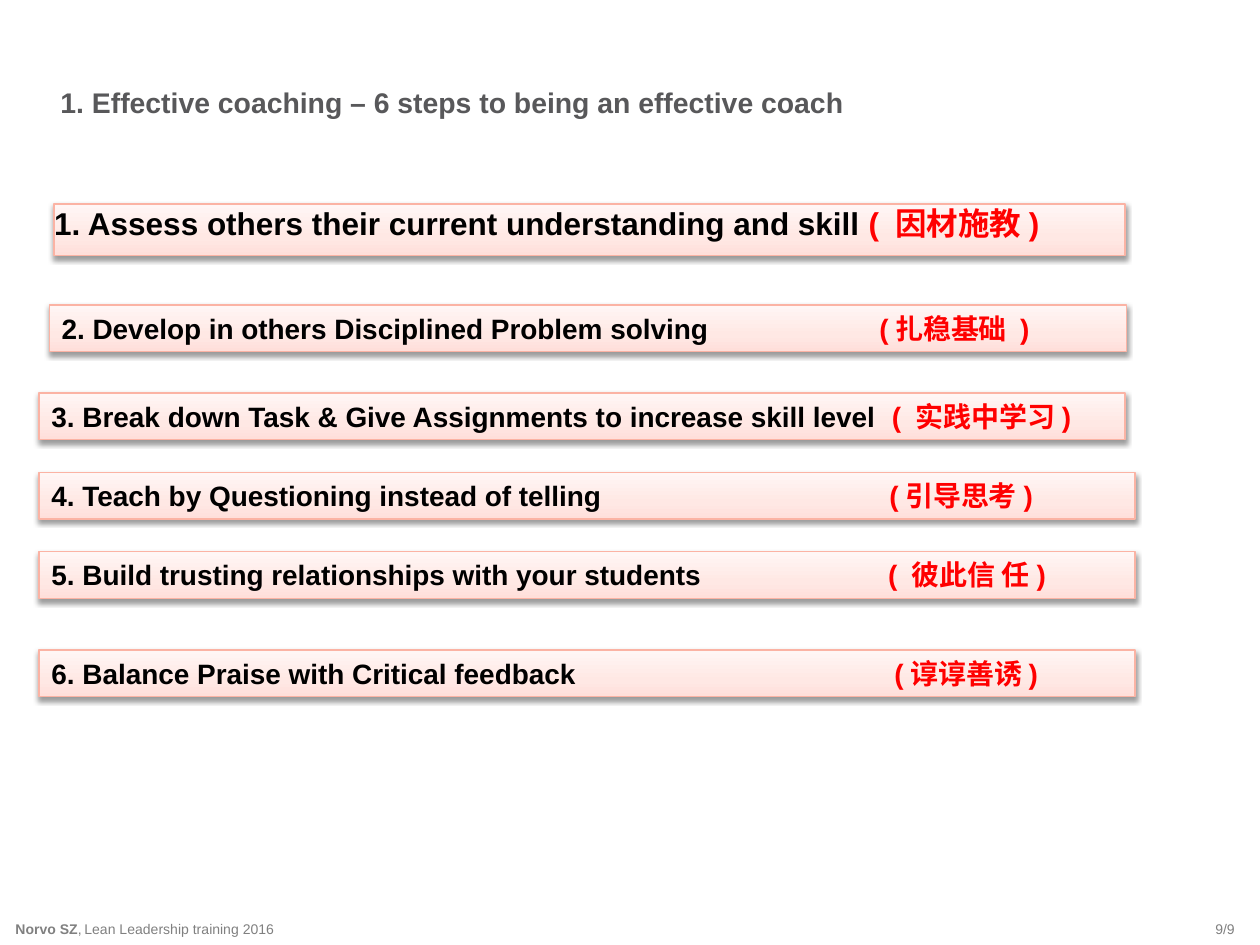
"""Build the slide on six steps to being an effective coach."""
from lxml import etree
from pptx import Presentation
from pptx.dml.color import RGBColor
from pptx.enum.shapes import MSO_SHAPE
from pptx.enum.text import MSO_ANCHOR, PP_ALIGN
from pptx.oxml import parse_xml
from pptx.util import Inches, Pt

RECTANGLE = MSO_SHAPE.RECTANGLE
TOP, MIDDLE = MSO_ANCHOR.TOP, MSO_ANCHOR.MIDDLE
LEFT, RIGHT = PP_ALIGN.LEFT, PP_ALIGN.RIGHT
NAMESPACE = "http://schemas.openxmlformats.org/drawingml/2006/main"
GRADIENT = f"""<a:gradFill xmlns:a="{NAMESPACE}" rotWithShape="1"><a:gsLst>
<a:gs pos="0"><a:srgbClr val="FFDFDA"/></a:gs>
<a:gs pos="35000"><a:srgbClr val="FFE8E4"/></a:gs>
<a:gs pos="100000"><a:srgbClr val="FFF6F5"/></a:gs>
</a:gsLst><a:lin ang="16200000" scaled="1"/></a:gradFill>"""
SHADOW = f"""<a:outerShdw xmlns:a="{NAMESPACE}" blurRad="40000" dist="20000"
dir="5400000" rotWithShape="0"><a:srgbClr val="000000"><a:alpha val="38000"/>
</a:srgbClr></a:outerShdw>"""


def color(value):
    return RGBColor.from_string(value)


def write_text(shape, runs, size, margins, anchor, align=LEFT):
    frame = shape.text_frame
    left, top, right, bottom = [Inches(margin) for margin in margins]
    layout = {"word_wrap": True, "vertical_anchor": anchor, "margin_left": left,
              "margin_top": top, "margin_right": right, "margin_bottom": bottom}
    for name, value in layout.items():
        setattr(frame, name, value)
    para = frame.paragraphs[0]
    para.alignment = align
    for text, ink, bold in runs:
        span = para.add_run()
        span.text = text
        for name, value in {"name": "Arial", "size": Pt(size), "bold": bold}.items():
            setattr(span.font, name, value)
        span.font.color.rgb = color(ink)
    return para


deck = Presentation()
deck.slide_width, deck.slide_height = Inches(10), Inches(7.5)
page = deck.slides.add_slide(deck.slide_layouts[6])

GRAY = "808080"
labels = [
    (9.25, 7.25, 0.75, 0.25, [("9/9", GRAY, False)], 8, (0, 0, 0.2, 0), RIGHT),
    (0, 7.25, 0.67, 0.25, [("Norvo SZ", GRAY, True), (",", GRAY, False)], 8,
     (0.04, 0, 0.02, 0), RIGHT),
    (0.67, 7.25, 8.17, 0.25, [("Lean Leadership training 2016", GRAY, False)], 8,
     (0, 0, 0, 0), LEFT),
    (0.42, 0.65, 6.79, 0.33,
     [("1. Effective coaching – 6 steps to being an effective coach", "58585A", True)],
     16.2, (0.06, 0, 0, 0), LEFT),
]
for *place, runs, size, margins, align in labels:
    box = page.shapes.add_textbox(*[Inches(length) for length in place])
    write_text(box, runs, size, margins, MIDDLE, align)

PLAIN, INSET = (0, 0, 0, 0), (0.1, 0.05, 0.1, 0.05)
steps = [
    (0.43, 1.62, 8.5, 0.41, 18, PLAIN, None,
     "1. Assess others their current understanding and skill ", "( 因材施教)"),
    (0.39, 2.42, 8.55, 0.37, 16, INSET, 6.49,
     "2. Develop in others Disciplined Problem solving", "(扎稳基础 )"),
    (0.31, 3.12, 8.62, 0.37, 16, INSET, 6.67,
     "3. Break down Task & Give Assignments to increase skill level", "( 实践中学习)"),
    (0.31, 3.75, 8.7, 0.37, 16, INSET, 6.65,
     "4. Teach by Questioning instead of telling", "(引导思考)"),
    (0.31, 4.38, 8.7, 0.37, 16, INSET, 6.64,
     "5. Build trusting relationships with your students", "( 彼此信 任)"),
    (0.31, 5.16, 8.7, 0.37, 16, INSET, 6.69,
     "6. Balance Praise with Critical feedback", "(谆谆善诱)"),
]
for *place, size, margins, tab, english, chinese in steps:
    bar = page.shapes.add_shape(RECTANGLE, *[Inches(length) for length in place])
    bar.fill.background()
    properties = bar.element.spPr
    properties.replace(properties.find(f"{{{NAMESPACE}}}noFill"), parse_xml(GRADIENT))
    bar.line.color.rgb = color("FBB3A4")
    bar.line.width = Pt(0.75)
    bar.shadow.inherit = False
    properties.find(f"{{{NAMESPACE}}}effectLst").append(parse_xml(SHADOW))
    gap = "\t" if tab else ""
    runs = [(english + gap, "000000", True), (chinese, "FF0000", True)]
    para = write_text(bar, runs, size, margins, TOP)
    if tab:
        tabs = etree.SubElement(para._p.get_or_add_pPr(), f"{{{NAMESPACE}}}tabLst")
        etree.SubElement(tabs, f"{{{NAMESPACE}}}tab", pos=str(Inches(tab)), algn="l")

deck.save("out.pptx")
